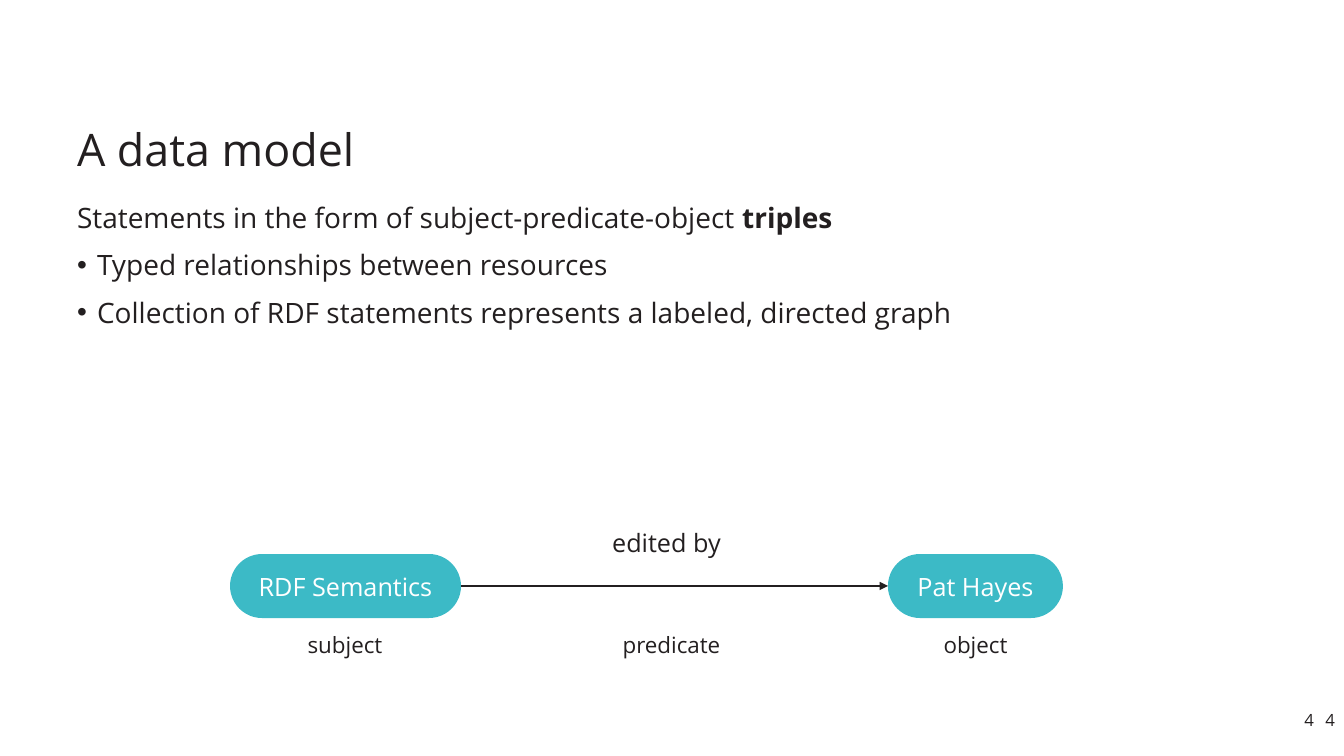
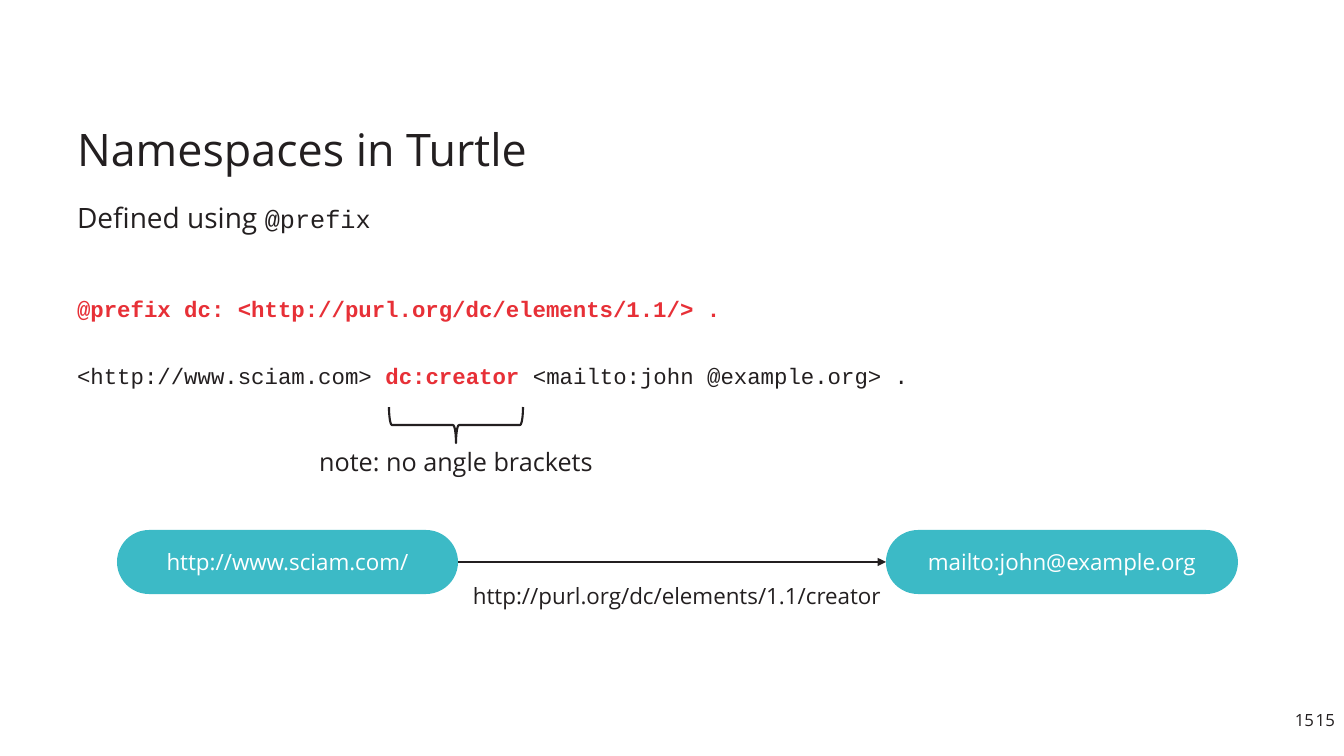
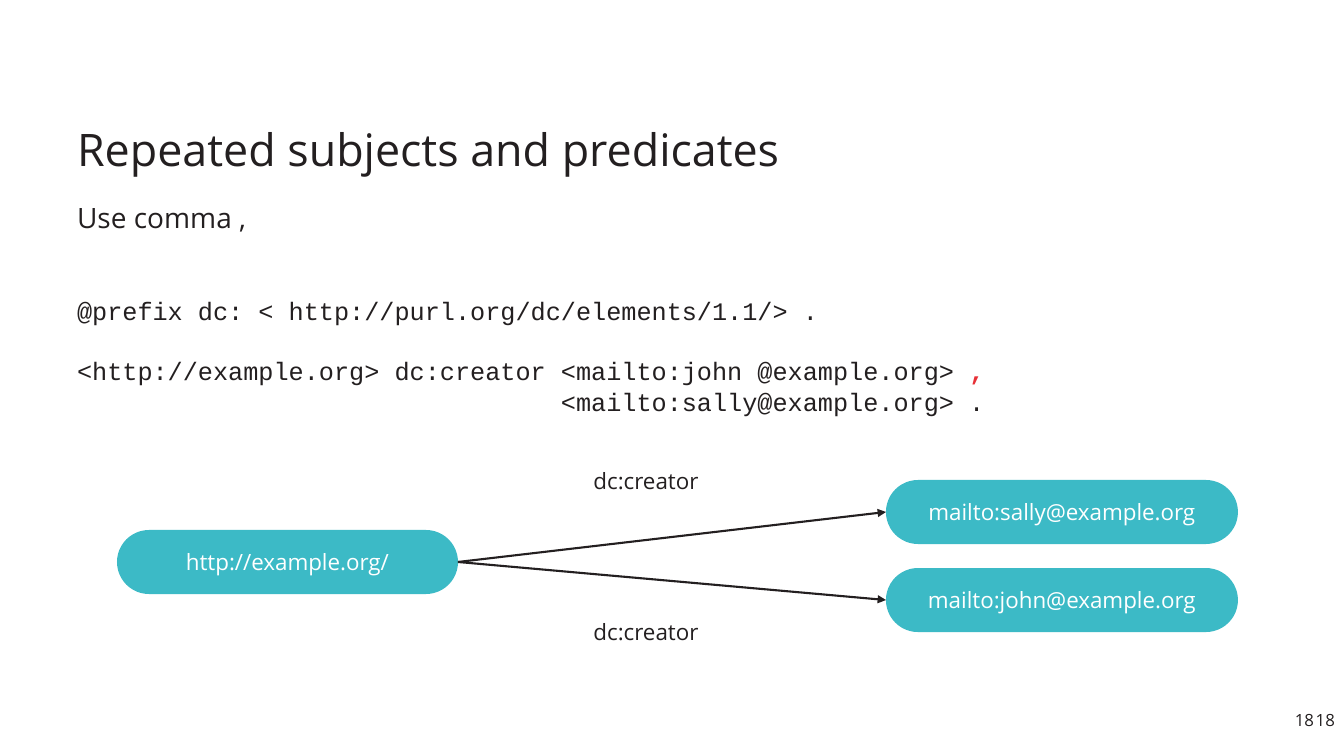
import pptx
import pptx.util
import pptx.dml.color
import pptx.enum.shapes
import pptx.enum.text
import pptx.oxml.ns
import lxml.etree

Pt = pptx.util.Pt
qn = pptx.oxml.ns.qn
ALIGN = pptx.enum.text.PP_ALIGN
ANCHOR = pptx.enum.text.MSO_ANCHOR
SHAPE = pptx.enum.shapes.MSO_SHAPE

# Shared look
PX = 914400 / 100.8
COLORS = {"ink": "231F20", "teal": "3CBAC6", "red": "E73037", "white": "FFFFFF"}
RGB = {name: pptx.dml.color.RGBColor.from_string(c) for name, c in COLORS.items()}
SANS, MONO = "Open Sans", "Courier New"
TITLE_AT = (69, 77, 1207, 103)
BODY_AT = (69, 196, 1207, 238)
PILL_H = 64
LINE_W = 1.5


def write(p, text, size=20, color="ink", bold=False, font=SANS):
    r = p.add_run()
    r.text = text
    r.font.size, r.font.bold, r.font.name = Pt(size), bold, font
    r.font.color.rgb = RGB[color]


def add_box(s, text, at, size=16, pill=False, align=ALIGN.CENTER, wrap=False, inset=(10, 5)):
    at = [round(v * PX) for v in at]
    if pill:
        sp = s.shapes.add_shape(SHAPE.ROUNDED_RECTANGLE, *at)
        sp.adjustments[0] = 0.5
        sp.shadow.inherit = False
        sp.fill.solid()
        sp.fill.fore_color.rgb = RGB["teal"]
        sp.line.fill.background()
    else:
        sp = s.shapes.add_textbox(*at)
    tf = sp.text_frame
    tf.word_wrap = wrap
    tf.margin_left = tf.margin_right = round(inset[0] * PX)
    tf.margin_top = tf.margin_bottom = round(inset[1] * PX)
    tf.vertical_anchor = ANCHOR.MIDDLE if pill else ANCHOR.TOP
    p = tf.paragraphs[0]
    p.alignment = align
    write(p, text, size, "white" if pill else "ink")
    return sp


# Formats of code runs
CODE = {"font": MONO, "size": 18}
SMALL = {"font": MONO, "size": 16}
MARK = {"color": "red", "bold": True}

# Body lines: runs, bullet, space before, line height
# Pills: text, left, top, width; the first is the subject, the others are objects
# Labels: text, box, size
SLIDES = [
    {
        "title": "A data model", "page": "4", "pill_size": 18,
        "body": [
            ([("Statements in the form of subject-predicate-object ", {}),
              ("triples", {"bold": True})], False, 0, 24),
            ([("Typed relationships between resources", {})], True, 10, 24),
            ([("Collection of RDF statements represents a labeled, directed graph", {})],
             True, 10, 24),
        ],
        "pills": [("RDF Semantics", 230, 554, 231), ("Pat Hayes", 888, 554, 175)],
        "labels": [
            ("edited by", (599, 522, 135, 40), 18),
            ("subject", (295, 626, 100, 37), 16),
            ("predicate", (610, 626, 123, 37), 16),
            ("object", (931, 626, 89, 37), 16),
        ],
    },
    {
        "title": "Namespaces in Turtle", "page": "15", "pill_size": 16,
        "body": [
            ([("Defined using ", {}), ("@prefix", CODE)], False, 0, 24),
            ([("@prefix dc: <http://purl.org/dc/elements/1.1/> .", {**SMALL, **MARK})],
             False, 44, 19),
            ([("<http://www.sciam.com> ", SMALL), ("dc:creator ", {**SMALL, **MARK}),
              ("<mailto:john @example.org> .", SMALL)], False, 29, 19),
        ],
        "pills": [("http://www.sciam.com/", 117, 530, 341),
                  ("mailto:john@example.org", 886, 530, 352)],
        "labels": [
            ("http://purl.org/dc/elements/1.1/creator", (440, 577, 474, 37), 16),
            ("note: no angle brackets", (300, 441, 312, 40), 18),
        ],
        "brace": (438, 358, 36, 134),
    },
    {
        "title": "Repeated subjects and predicates", "page": "18", "pill_size": 16,
        "body": [
            ([("Use comma ,", {})], False, 0, 24),
            ([("@prefix dc: < http://purl.org/dc/elements/1.1/> .", CODE)], False, 44, 21.6),
            ([("<http://example.org> dc:creator <mailto:john @example.org> ", CODE),
              (",", {**CODE, **MARK})], False, 21.6, 21.6),
            ([("                                <mailto:sally@example.org> .", CODE)],
             False, 0, 21.6),
        ],
        "pills": [("http://example.org/", 117, 530, 341),
                  ("mailto:sally@example.org", 886, 480, 352),
                  ("mailto:john@example.org", 886, 568, 352)],
        "labels": [("dc:creator", (577, y, 138, 37), 16) for y in (462, 613)],
    },
]

prs = pptx.Presentation()
prs.slide_width, prs.slide_height = round(1344 * PX), round(756 * PX)
layout = prs.slide_layouts[1]

# Title and body places, set once on the layout
for sp, at in zip(list(layout.placeholders)[:2], (TITLE_AT, BODY_AT)):
    sp.left, sp.top, sp.width, sp.height = [round(v * PX) for v in at]

for data in SLIDES:
    s = prs.slides.add_slide(layout)
    title, body = s.shapes.title, s.placeholders[1]
    for sp, anchor in ((title, ANCHOR.BOTTOM), (body, ANCHOR.TOP)):
        tf = sp.text_frame
        tf.auto_size = pptx.enum.text.MSO_AUTO_SIZE.NONE
        tf.word_wrap = True
        tf.vertical_anchor = anchor
        tf.margin_left = tf.margin_right = round(8 * PX)
        tf.margin_top = tf.margin_bottom = round(4 * PX)

    # Title
    p = title.text_frame.paragraphs[0]
    p.alignment = ALIGN.LEFT
    p.line_spacing = 0.9
    write(p, data["title"], 32)

    # Body
    tf = body.text_frame
    for i, (runs, bullet, before, height) in enumerate(data["body"]):
        p = tf.add_paragraph() if i else tf.paragraphs[0]
        pPr = p._p.get_or_add_pPr()
        indent = round(20 * PX) if bullet else 0
        pPr.set("marL", str(indent))
        pPr.set("indent", str(-indent))
        if bullet:
            lxml.etree.SubElement(pPr, qn("a:buChar")).set("char", "•")
        else:
            lxml.etree.SubElement(pPr, qn("a:buNone"))
        p.alignment = ALIGN.LEFT
        p.space_before = Pt(before)
        p.line_spacing = Pt(height)
        for text, fmt in runs:
            write(p, text, **fmt)

    # Page number, shown twice
    for x in (1275, 1296):
        add_box(s, data["page"], (x, 704, 47, 31), 12, align=ALIGN.RIGHT, wrap=True,
                inset=(8, 6))

    # Graph nodes
    subject, *objects = [add_box(s, text, (x, y, w, PILL_H), data["pill_size"], pill=True)
                         for text, x, y, w in data["pills"]]

    # Arrows from the subject to each object
    for obj in objects:
        cx = s.shapes.add_connector(pptx.enum.shapes.MSO_CONNECTOR.STRAIGHT, 0, 0, 0, 0)
        cx.begin_connect(subject, 3)
        cx.end_connect(obj, 1)
        cx.line.color.rgb = RGB["ink"]
        cx.line.width = Pt(LINE_W)
        spPr = cx.element.spPr
        lxml.etree.SubElement(spPr.find(qn("a:ln")), qn("a:tailEnd")).set("type", "triangle")
        lxml.etree.SubElement(spPr, qn("a:effectLst"))

    # Labels
    for text, at, size in data["labels"]:
        add_box(s, text, at, size)

    # Brace under the predicate
    if "brace" in data:
        sp = s.shapes.add_shape(SHAPE.LEFT_BRACE, *[round(v * PX) for v in data["brace"]])
        sp.rotation = 270
        sp.shadow.inherit = False
        sp.fill.background()
        sp.line.color.rgb = RGB["ink"]
        sp.line.width = Pt(LINE_W)

prs.save("out.pptx")
